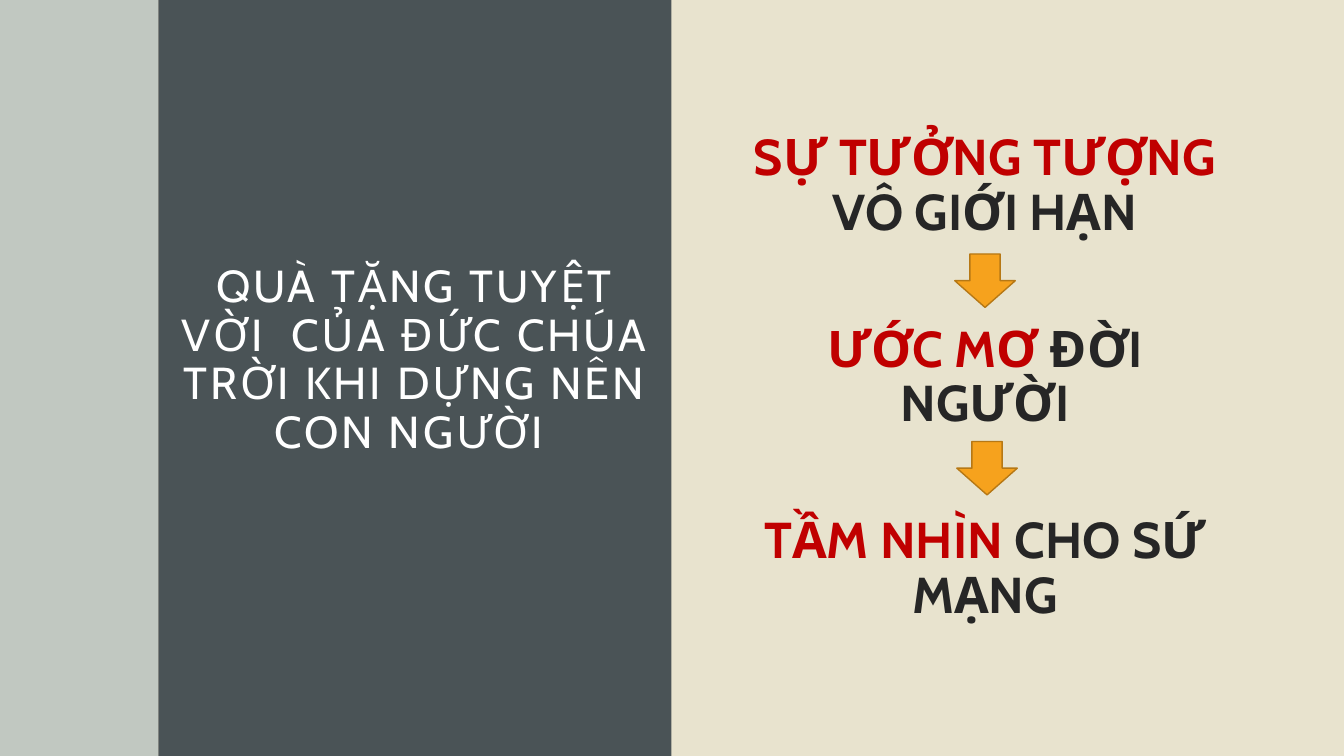
from lxml import etree
from pptx import Presentation
from pptx.dml.color import RGBColor
from pptx.enum import shapes, text
from pptx.oxml.ns import qn
from pptx.util import Inches, Pt

FONT = "Cabin"
RED, INK = "C00000", "262626"
KIND = shapes.MSO_SHAPE


def color(value):
    return RGBColor.from_string(value)


def paint(fill, value):
    fill.solid()
    fill.fore_color.rgb = color(value)


def add_form(slide, kind, box, fill, line=None, alpha=None):
    """Add a filled shape, with an outline or transparency if asked."""
    form = slide.shapes.add_shape(kind, *map(Inches, box))
    form.shadow.inherit = False
    paint(form.fill, fill)
    if line:
        paint(form.line.fill, line)
        form.line.width = Pt(1)
    else:
        form.line.fill.background()
    if alpha:
        tone = form.fill._xPr.find(".//" + qn("a:srgbClr"))
        etree.SubElement(tone, qn("a:alpha"), val=str(alpha * 1000))


def add_text(slide, box, paras, size, bold=False, inset=(0.1, 0.05),
             gap=0, track=0):
    """Add centred paragraphs, each a list of (words, colour) runs."""
    frame = slide.shapes.add_textbox(*map(Inches, box)).text_frame
    side, edge = map(Inches, inset)
    look = {"word_wrap": True, "vertical_anchor": text.MSO_ANCHOR.MIDDLE,
            "margin_left": side, "margin_right": side,
            "margin_top": edge, "margin_bottom": edge}
    for name, value in look.items():
        setattr(frame, name, value)
    for i, runs in enumerate(paras):
        para = frame.add_paragraph() if i else frame.paragraphs[0]
        form = {"alignment": text.PP_ALIGN.CENTER, "line_spacing": 0.9,
                "space_before": Pt(gap if i else 0)}
        for name, value in form.items():
            setattr(para, name, value)
        for words, tint in runs:
            run = para.add_run()
            run.text = words
            for name, value in {"name": FONT, "size": Pt(size), "bold": bold}.items():
                setattr(run.font, name, value)
            run.font.color.rgb = color(tint)
            if track:
                run.font._element.set("spc", str(track * 100))


def main():
    deck = Presentation()
    deck.slide_width, deck.slide_height = Inches(13.33), Inches(7.5)
    slide = deck.slides.add_slide(deck.slide_layouts[6])
    paint(slide.background.fill, "E8E3CE")

    # Side bands
    add_form(slide, KIND.RECTANGLE, (0, 0, 1.57, 7.5), "9BAFB5", alpha=50)
    add_form(slide, KIND.RECTANGLE, (1.57, 0, 5.09, 7.5), "4A5356")

    # Title
    title = "QUÀ TẶNG TUYỆT VỜI  CỦA ĐỨC CHÚA TRỜI KHI DỰNG NÊN CON NGƯỜI "
    add_text(slide, (1.57, 0.82, 5.1, 5.52), [[(title, "FFFFFF")]], 32,
             inset=(0.2, 0.2), track=2)

    # Three steps
    steps = [("SỰ TƯỞNG TƯỢNG ", "VÔ GIỚI HẠN"),
             ("ƯỚC MƠ ", "ĐỜI NGƯỜI"),
             ("TẦM NHÌN ", "CHO SỨ MẠNG")]
    add_text(slide, (7.22, 1.16, 5.1, 5.18),
             [[(key, RED), (rest, INK)] for key, rest in steps],
             36, bold=True, gap=59)

    # Arrows between the steps
    for left, top in ((9.47, 2.52), (9.49, 4.38)):
        add_form(slide, KIND.DOWN_ARROW, (left, top, 0.6, 0.53),
                 "F6A21D", line="B67815")

    deck.save("out.pptx")


if __name__ == "__main__":
    main()
